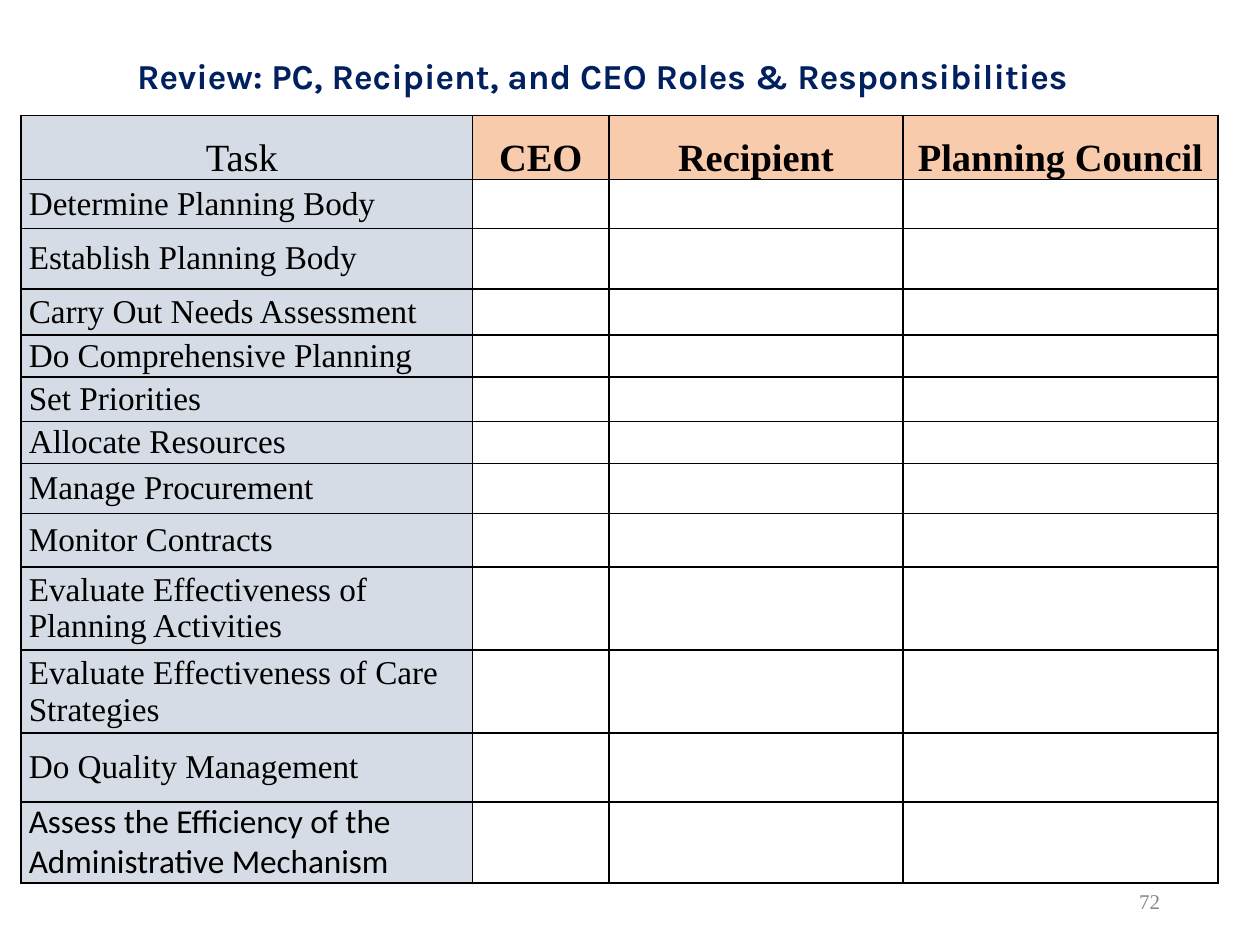
from lxml.etree import SubElement
from pptx import Presentation
from pptx.dml.color import RGBColor
from pptx.enum.text import MSO_ANCHOR as ANCHOR, PP_ALIGN as ALIGN
from pptx.oxml.ns import qn
from pptx.util import Pt

TITLE = "Review: PC, Recipient, and CEO Roles & Responsibilities "
PAGE = "72"
HEADERS = ["Task ", "CEO", "Recipient", "Planning Council"]
TASKS = [
    ("Determine Planning Body", 28),
    ("Establish Planning Body", 34.5),
    ("Carry Out Needs Assessment", 26.5),
    ("Do Comprehensive Planning", 24),
    ("Set Priorities", 25.5),
    ("Allocate Resources", 24),
    ("Manage Procurement", 28.5),
    ("Monitor Contracts", 30.5),
    ("Evaluate Effectiveness of Planning Activities", 47.5),
    ("Evaluate Effectiveness of Care Strategies", 47.5),
    ("Do Quality Management", 39.5),
    ("Assess the Efficiency of the Administrative Mechanism", 45.5),
]
COL_WIDTHS = [258, 78, 168, 180]
HEADER_HEIGHT = 26.5
COLORS = {"navy": "002060", "black": "000000", "gray": "898989",
          "task": "D6DCE5", "role": "F8CBAD"}
SERIF = "Times New Roman"


def write(tf, text, size=19, font=SERIF, color="black", bold=False,
          align=ALIGN.LEFT, spacing=None):
    tf.word_wrap = True
    p = tf.paragraphs[0]
    p.alignment = align
    if spacing:
        p.line_spacing = spacing
    r = p.add_run()
    r.text = text
    r.font.size = Pt(size)
    r.font.name = font
    r.font.bold = bold
    r.font.color.rgb = RGBColor.from_string(COLORS[color])


def format_cell(cell, fill=None):
    cell.margin_left = cell.margin_right = Pt(4.5)
    cell.margin_top = cell.margin_bottom = 0
    cell.vertical_anchor = ANCHOR.MIDDLE
    pr = cell._tc.get_or_add_tcPr()
    for side in ("lnL", "lnR", "lnT", "lnB"):
        line = SubElement(pr, qn(f"a:{side}"), w=str(Pt(1)))
        solid = SubElement(line, qn("a:solidFill"))
        SubElement(solid, qn("a:srgbClr"), val=COLORS["black"])
    if fill:
        cell.fill.solid()
        cell.fill.fore_color.rgb = RGBColor.from_string(COLORS[fill])
    else:
        cell.fill.background()


def place(s, left, top, width, height):
    s.left, s.top, s.width, s.height = Pt(left), Pt(top), Pt(width), Pt(height)


def build_table(slide):
    heights = [HEADER_HEIGHT] + [height for _, height in TASKS]
    table = slide.shapes.add_table(
        len(heights), len(COL_WIDTHS), Pt(12), Pt(66),
        Pt(sum(COL_WIDTHS)), Pt(sum(heights))).table
    table.first_row = table.horz_banding = False
    for column, width in zip(table.columns, COL_WIDTHS):
        column.width = Pt(width)
    for row, height in zip(table.rows, heights):
        row.height = Pt(height)

    for i, text in enumerate(HEADERS):
        cell = table.cell(0, i)
        format_cell(cell, "role" if i else "task")
        write(cell.text_frame, text, size=22, bold=i > 0,
              align=ALIGN.CENTER, spacing=1.5)
    for i, (task, _) in enumerate(TASKS, 1):
        for j in range(len(HEADERS)):
            format_cell(table.cell(i, j), None if j else "task")
        write(table.cell(i, 0).text_frame, task,
              font="Calibri" if i == len(TASKS) else SERIF)


def main():
    prs = Presentation()
    prs.slide_width, prs.slide_height = Pt(720), Pt(540)
    slide = prs.slides.add_slide(prs.slide_layouts[5])

    title = slide.shapes.title
    place(title, 24, 29, 646, 25)
    title.text_frame.vertical_anchor = ANCHOR.MIDDLE
    write(title.text_frame, TITLE, size=20, font="Karla", color="navy",
          bold=True, align=ALIGN.CENTER, spacing=1.15)

    build_table(slide)

    page = slide.shapes.add_textbox(Pt(508), Pt(500.5), Pt(162), Pt(29))
    page.text_frame.vertical_anchor = ANCHOR.MIDDLE
    write(page.text_frame, PAGE, size=12, color="gray", align=ALIGN.RIGHT)

    prs.save("out.pptx")


if __name__ == "__main__":
    main()
